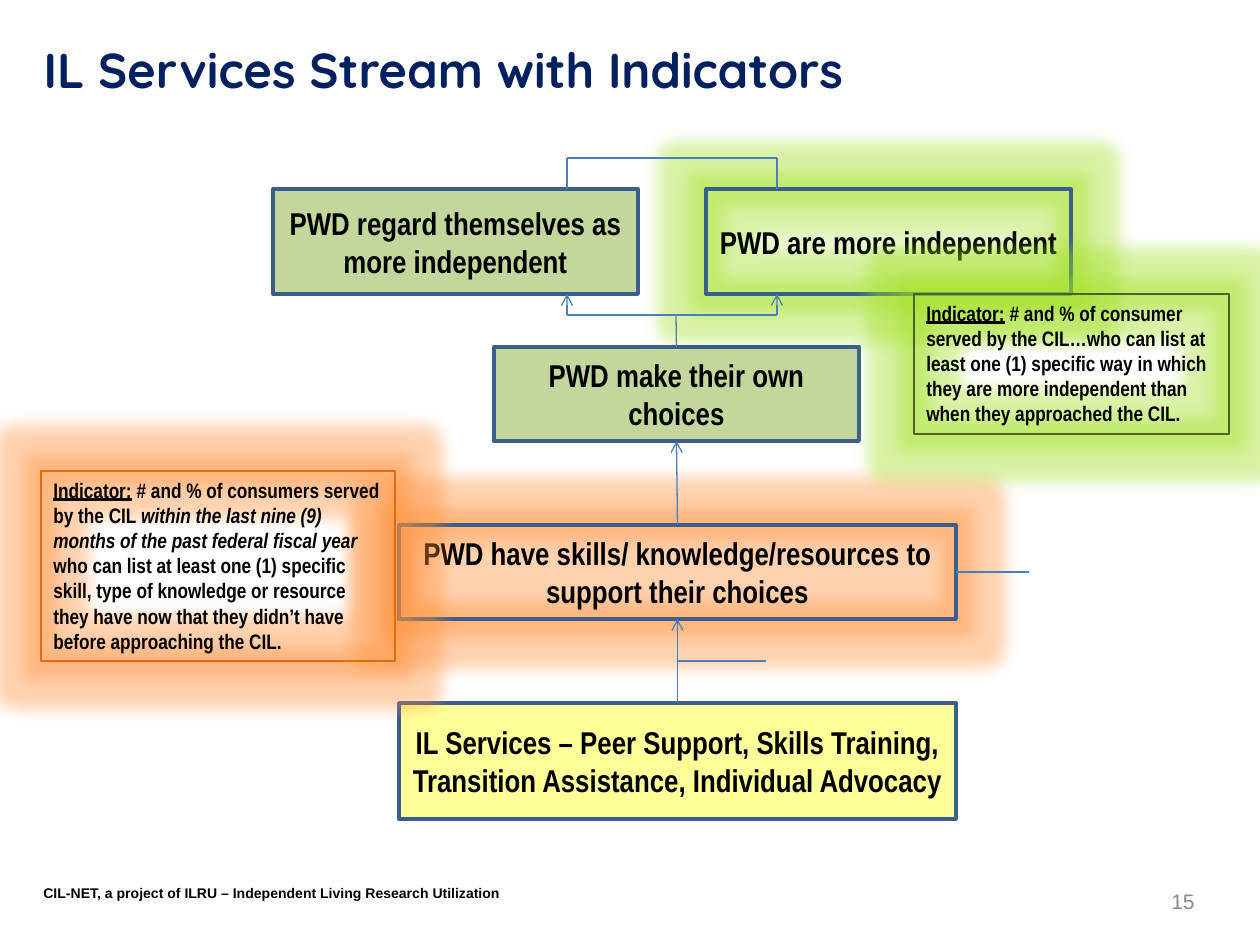
from lxml.etree import SubElement
from pptx import Presentation
from pptx.dml.color import RGBColor
from pptx.enum.shapes import MSO_CONNECTOR, MSO_SHAPE
from pptx.enum.text import MSO_ANCHOR, MSO_AUTO_SIZE, PP_ALIGN
from pptx.oxml.ns import qn
from pptx.util import Emu, Pt

PIXELS_PER_INCH = 126
TOP, LEFT, BOTTOM, RIGHT = range(4)

BORDER, FLOW = "3A5F8C", "4B7EBC"
SAGE, YELLOW = "C3D69B", "FFFF99"
GREEN_GLOW, ORANGE_GLOW = "A0E020", "FF8F38"
BOX_FONT = {"name": "Arial Narrow", "size": Pt(18), "bold": True}
NOTE_FONT = {"name": "Arial Narrow", "size": Pt(12), "bold": True}


def px(value):
    return Emu(round(value * 914400 / PIXELS_PER_INCH))


def color(hex_value):
    return RGBColor.from_string(hex_value)


def place(shape, left, top, width, height):
    values = {"left": left, "top": top, "width": width, "height": height}
    for name, value in values.items():
        setattr(shape, name, px(value))


def write(shape, runs, font, hex_value="000000", align=PP_ALIGN.LEFT,
          anchor=MSO_ANCHOR.TOP):
    """Fill a shape with one paragraph of (text, extra format) runs."""
    frame = shape.text_frame
    frame.word_wrap = True
    frame.auto_size = MSO_AUTO_SIZE.NONE
    frame.vertical_anchor = anchor
    para = frame.paragraphs[0]
    para.alignment = align
    for text, extra in runs:
        span = para.add_run()
        span.text = text
        for name, value in {**font, **extra}.items():
            setattr(span.font, name, value)
        span.font.color.rgb = color(hex_value)


def add_label(page, area, text, font, hex_value, **layout):
    label = page.shapes.add_textbox(*map(px, area))
    write(label, [(text, {})], font, hex_value, **layout)


def add_glow(shape, hex_value):
    effects = shape._element.spPr.find(qn("a:effectLst"))
    glow = SubElement(effects, qn("a:glow"), rad=str(Pt(18)))
    tint = SubElement(glow, qn("a:srgbClr"), val=hex_value)
    SubElement(tint, qn("a:alpha"), val="40000")


def add_rectangle(page, area, line, width, fill=None, glow=None):
    box = page.shapes.add_shape(MSO_SHAPE.RECTANGLE, *map(px, area))
    box.line.color.rgb = color(line)
    box.line.width = Pt(width)
    box.shadow.inherit = False
    if fill:
        box.fill.solid()
        box.fill.fore_color.rgb = color(fill)
    else:
        box.fill.background()
    if glow:
        add_glow(box, glow)
    return box


def add_box(page, area, text, width, fill=None, glow=None):
    box = add_rectangle(page, area, BORDER, width, fill, glow)
    write(box, [(text, {})], BOX_FONT, align=PP_ALIGN.CENTER,
          anchor=MSO_ANCHOR.MIDDLE)
    return box


def add_note(page, area, line, glow, runs):
    note = add_rectangle(page, area, line, 0.75, glow=glow)
    write(note, [("Indicator:", {"underline": True})] + runs, NOTE_FONT)


def add_line(page, start, end, arrow=False, begin=None, finish=None):
    """Draw a line; begin and finish are optional (box, side) joints."""
    line = page.shapes.add_connector(
        MSO_CONNECTOR.STRAIGHT, *map(px, start + end))
    line.line.color.rgb = color(FLOW)
    line.line.width = Pt(0.75)
    if arrow:
        SubElement(line.line._get_or_add_ln(), qn("a:tailEnd"), type="arrow")
    SubElement(line._element.spPr, qn("a:effectLst"))
    if begin:
        line.begin_connect(*begin)
    if finish:
        line.end_connect(*finish)


def main():
    deck = Presentation()
    deck.slide_width, deck.slide_height = px(1260), px(945)
    page = deck.slides.add_slide(deck.slide_layouts[5])

    # Title, footer and page number
    title = page.shapes.title
    place(title, 31, -10, 1134, 157)
    write(title, [("IL Services Stream with Indicators", {})],
          {"name": "Quicksand", "size": Pt(28), "bold": True}, "002060",
          anchor=MSO_ANCHOR.MIDDLE)
    add_label(page, (31, 878, 630, 29),
              "CIL-NET, a project of ILRU – Independent Living Research Utilization",
              {"name": "Arial", "size": Pt(8), "bold": True}, "000000")
    add_label(page, (914, 876, 293, 50), "15",
              {"name": "Arial", "size": Pt(12)}, "898989",
              align=PP_ALIGN.RIGHT, anchor=MSO_ANCHOR.MIDDLE)

    # Outcome boxes, from the results down to the services
    add_box(page, (706, 189, 365, 105), "PWD are more independent", 2.25,
            glow=GREEN_GLOW)
    add_box(page, (273, 189, 365, 105),
            "PWD regard themselves as more independent", 2.25, SAGE)
    choices = add_box(page, (494, 347, 365, 94),
                      "PWD make their own choices", 2.25, SAGE)
    skills = add_box(
        page, (399, 525, 557, 94),
        "PWD have skills/ knowledge/resources to support their choices", 2,
        glow=ORANGE_GLOW)
    services = add_box(
        page, (399, 703, 557, 116),
        "IL Services – Peer Support, Skills Training, "
        "Transition Assistance, Individual Advocacy", 2, YELLOW)

    # Brackets above and below the two results
    branches = (567, 777)
    for x in branches:
        add_line(page, (x, 189), (x, 158))
        add_line(page, (x, 315), (x, 294), arrow=True)
    for y in (158, 315):
        add_line(page, (branches[0], y), (branches[1], y))

    # Flow between the levels
    add_line(page, (676, 347), (676, 315), begin=(choices, TOP))
    add_line(page, (677, 525), (676, 441), arrow=True,
             begin=(skills, TOP), finish=(choices, BOTTOM))
    add_line(page, (677, 703), (677, 619), arrow=True,
             begin=(services, TOP), finish=(skills, BOTTOM))
    add_line(page, (677, 661), (766, 661))
    add_line(page, (956, 572), (1029, 572), begin=(skills, RIGHT))

    # Indicator notes
    add_note(page, (41, 471, 354, 190), "E46C0A", ORANGE_GLOW, [
        (" # and % of consumers served by the CIL ", {}),
        ("within the last nine (9) months of the past federal fiscal year",
         {"italic": True}),
        (" who can list at least one (1) specific skill, type of knowledge or "
         "resource they have now that they didn’t have before approaching "
         "the CIL.", {})])
    add_note(page, (914, 294, 315, 140), "4F6228", GREEN_GLOW, [
        (" # and % of consumer served by the CIL…who can list at least one (1) "
         "specific way in which they are more independent than when they "
         "approached the CIL.", {})])

    deck.save("out.pptx")


if __name__ == "__main__":
    main()
